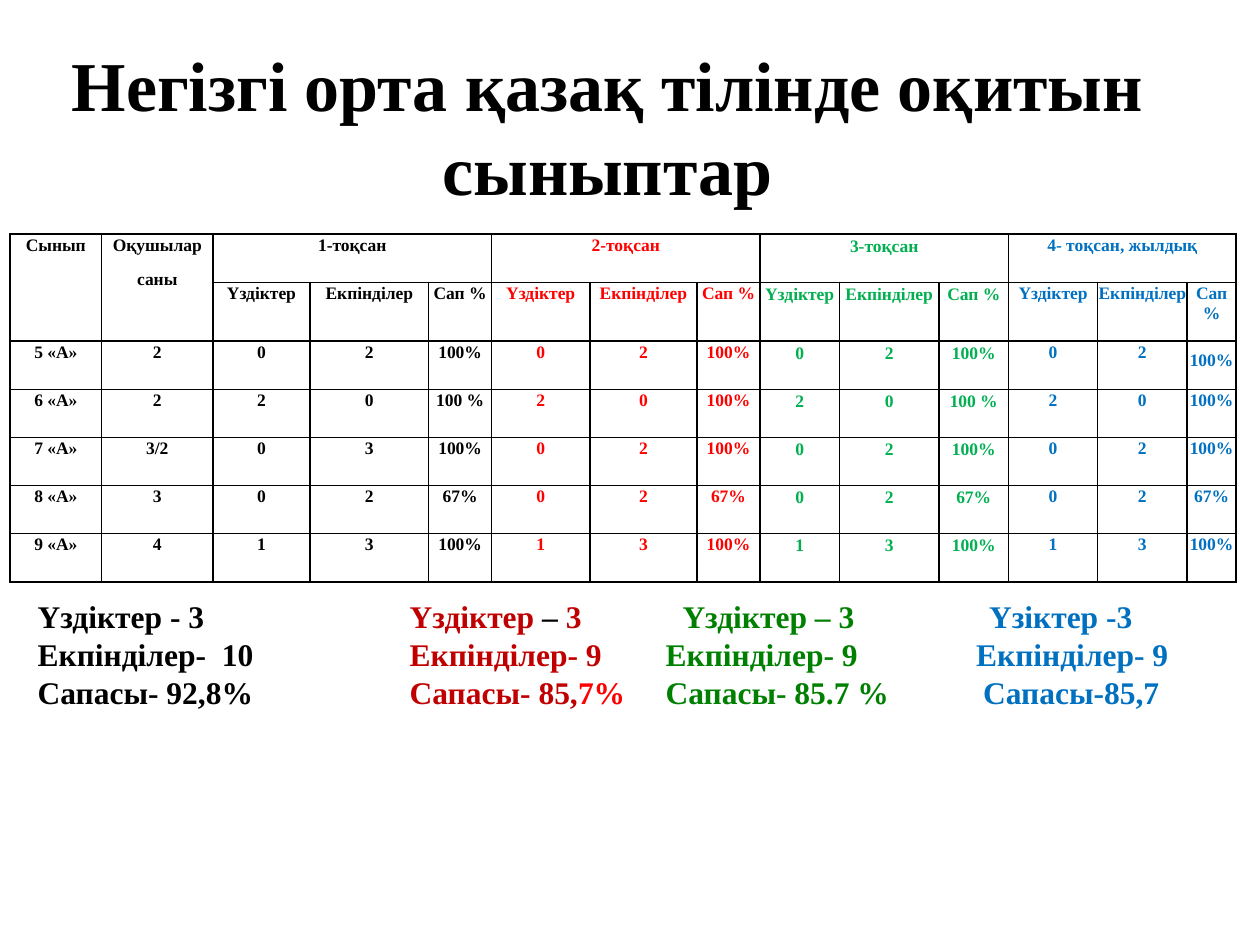
"""Build the slide with quarterly results of the Kazakh-language classes."""
from typing import NamedTuple

from lxml import etree
from pptx import Presentation
from pptx import util as u
from pptx.dml import color as dml
from pptx.enum import text as t
from pptx.oxml import ns

FONT = "Times New Roman"
BLACK, RED, GREEN, BLUE = "000000", "FF0000", "00B050", "0070C0"
DARK_RED, DARK_GREEN = "C00000", "008000"


class Group(NamedTuple):
    title: str
    color: str
    side: float
    top: float
    widths: tuple


class SummaryLine(NamedTuple):
    stops: tuple
    runs: tuple


QUARTERS = (
    Group("1-тоқсан", BLACK, 0.05, 0, (1.96, 2.39, 1.27)),
    Group("2-тоқсан", RED, 0.05, 0, (1.98, 2.16, 1.27)),
    Group("3-тоқсан", GREEN, 0.02, 0.02, (1.6, 2.01, 1.4)),
    Group("4- тоқсан, жылдық", BLUE, 0, 0, (1.8, 1.8, 0.99)),
)
CLASS_GROUP = Group("", BLACK, 0.05, 0, (1.85, 2.24))
GROUPS = (CLASS_GROUP, *QUARTERS)
MEASURES = ("Үздіктер", "Екпінділер", "Сап %")
RESULTS = (
    ("5 «А»", "2", "0", "2", "100%", "0", "2", "100%", "0", "2", "100%", "0", "2", "100%"),
    ("6 «А»", "2", "2", "0", "100 %", "2", "0", "100%", "2", "0", "100 %", "2", "0", "100%"),
    ("7 «А»", "3/2", "0", "3", "100%", "0", "2", "100%", "0", "2", "100%", "0", "2", "100%"),
    ("8 «А»", "3", "0", "2", "67%", "0", "2", "67%", "0", "2", "67%", "0", "2", "67%"),
    ("9 «А»", "4", "1", "3", "100%", "1", "3", "100%", "1", "3", "100%", "1", "3", "100%"),
)
SUMMARY = (
    SummaryLine((7.5, 13, 19.18), (
        ("Үздіктер - 3", BLACK), ("\tҮздіктер", DARK_RED), (" – ", BLACK), ("3", DARK_RED),
        ("\tҮздіктер – 3", DARK_GREEN), ("\tҮзіктер -3", BLUE))),
    SummaryLine((7.5, 12.66, 18.92), (
        ("Екпінділер-  10", BLACK), ("\tЕкпінділер- 9", DARK_RED),
        ("\tЕкпінділер- 9", DARK_GREEN), ("\tЕкпінділер- 9", BLUE))),
    SummaryLine((7.5, 12.66, 19.06), (
        ("Сапасы- 92,8%", BLACK), ("\tСапасы- 85,", DARK_RED), ("7%", RED),
        ("\tСапасы- 85.7 %", DARK_GREEN), ("\tСапасы-85,7", BLUE))),
)


def rgb(value: str) -> dml.RGBColor:
    return dml.RGBColor.from_string(value)


def write(paragraph, content: str, *, size: float, color: str = BLACK) -> None:
    run = paragraph.add_run()
    run.text = content
    run.font.name = FONT
    run.font.size = u.Pt(size)
    run.font.bold = True
    run.font.color.rgb = rgb(color)


def add_frame(slide, left: float, top: float, width: float, height: float):
    shape = slide.shapes.add_textbox(u.Cm(left), u.Cm(top), u.Cm(width), u.Cm(height))
    frame = shape.text_frame
    frame.word_wrap = True
    frame.auto_size = t.MSO_AUTO_SIZE.SHAPE_TO_FIT_TEXT
    return frame


def add_title(slide) -> None:
    paragraph = add_frame(slide, 0.74, 0.71, 23.01, 3.68).paragraphs[0]
    paragraph.alignment = t.PP_ALIGN.CENTER
    write(paragraph, "Негізгі орта қазақ тілінде оқитын сыныптар", size=40)


def add_summary(slide) -> None:
    frame = add_frame(slide, 0.51, 11.91, 23.7, 3.33)
    for index, line in enumerate(SUMMARY):
        paragraph = frame.add_paragraph() if index else frame.paragraphs[0]
        tabs = etree.SubElement(paragraph._p.get_or_add_pPr(), ns.qn("a:tabLst"))
        for stop in line.stops:
            etree.SubElement(tabs, ns.qn("a:tab"), pos=str(u.Cm(stop)), algn="l")
        for content, color in line.runs:
            write(paragraph, content, size=18, color=color)


def style_cell(cell, group: Group) -> None:
    cell.margin_left = cell.margin_right = u.Cm(group.side)
    cell.margin_top, cell.margin_bottom = u.Cm(group.top), 0
    properties = cell._tc.get_or_add_tcPr()
    for side in ("lnL", "lnR", "lnT", "lnB"):
        line = etree.SubElement(properties, ns.qn(f"a:{side}"), w=str(u.Pt(1)))
        fill = etree.SubElement(line, ns.qn("a:solidFill"))
        etree.SubElement(fill, ns.qn("a:srgbClr"), val=BLACK)
    cell.fill.background()


def fill_cell(cell, content: str, color: str, spacing: float = 1.07) -> None:
    frame = cell.text_frame
    for index, part in enumerate(content.split("\n")):
        paragraph = frame.add_paragraph() if index else frame.paragraphs[0]
        paragraph.alignment = t.PP_ALIGN.CENTER
        paragraph.line_spacing = spacing
        paragraph.space_after = u.Pt(8)
        write(paragraph, part, size=10, color=color)


def add_results(slide) -> None:
    columns = [(group, width) for group in GROUPS for width in group.widths]
    row_count = len(RESULTS) + 2
    table = slide.shapes.add_table(
        row_count, len(columns), u.Cm(0.2), u.Cm(4.72), u.Cm(24.7), u.Cm(6.76)).table
    table.first_row = table.horz_banding = False
    for row in table.rows:
        row.height = u.Cm(0.97)
    for index, (group, width) in enumerate(columns):
        table.columns[index].width = u.Cm(width)
        for row in range(row_count):
            style_cell(table.cell(row, index), group)
    for index, heading in enumerate(("Сынып", "Оқушылар\nсаны")):
        table.cell(0, index).merge(table.cell(1, index))
        fill_cell(table.cell(0, index), heading, BLACK)
    for number, quarter in enumerate(QUARTERS):
        first = 2 + number * len(MEASURES)
        table.cell(0, first).merge(table.cell(0, first + len(MEASURES) - 1))
        fill_cell(table.cell(0, first), quarter.title, quarter.color)
        for offset, measure in enumerate(MEASURES):
            fill_cell(table.cell(1, first + offset), measure, quarter.color)
    last_of_first_row = (2, len(columns) - 1)
    for row, values in enumerate(RESULTS, start=2):
        for index, value in enumerate(values):
            spacing = 1.5 if (row, index) == last_of_first_row else 1.07
            fill_cell(table.cell(row, index), value, columns[index][0].color, spacing)


def main() -> None:
    presentation = Presentation()
    presentation.slide_width, presentation.slide_height = u.Cm(25.4), u.Cm(19.05)
    slide = presentation.slides.add_slide(presentation.slide_layouts[6])
    add_title(slide)
    add_summary(slide)
    add_results(slide)
    presentation.save("out.pptx")


if __name__ == "__main__":
    main()
